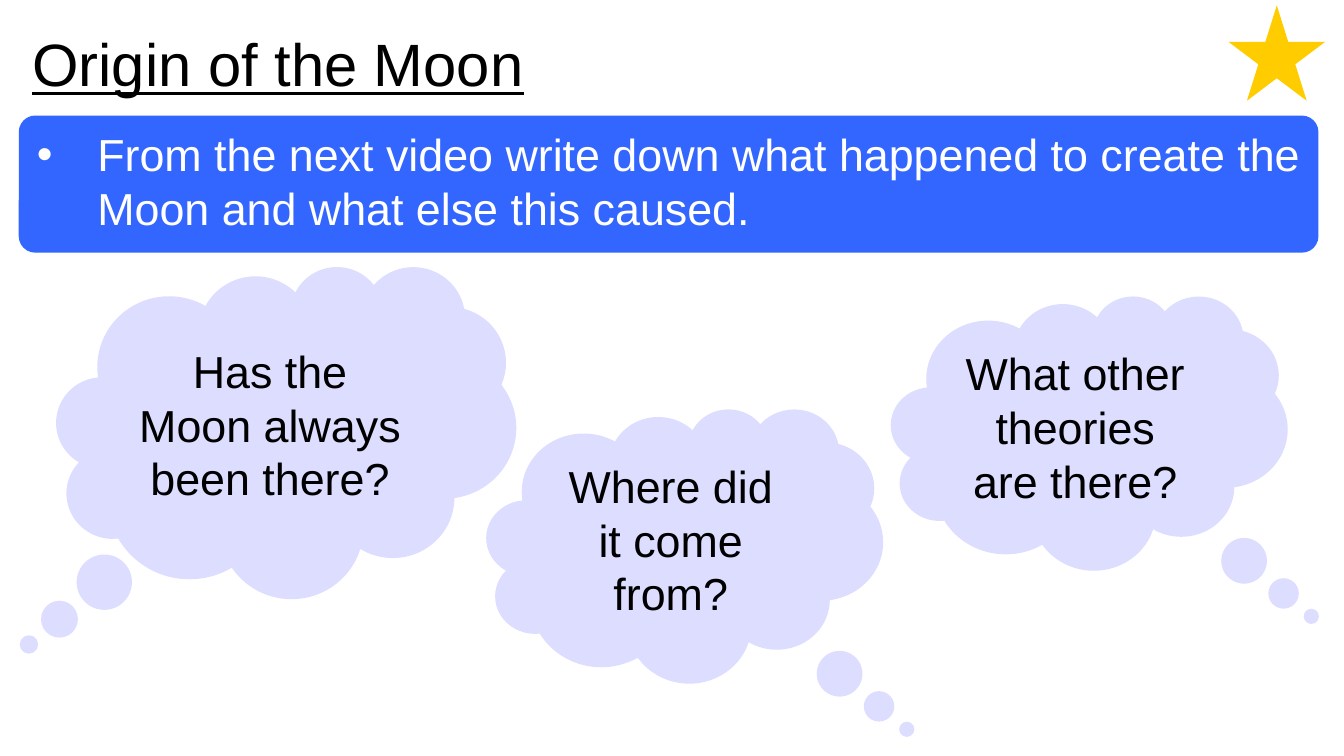
from dataclasses import dataclass

from lxml import etree
from pptx import Presentation
from pptx.dml.color import RGBColor
from pptx.enum.shapes import MSO_SHAPE
from pptx.enum.text import MSO_ANCHOR, MSO_AUTO_SIZE, PP_ALIGN
from pptx.oxml.ns import qn
from pptx.shapes.autoshape import Shape
from pptx.slide import Slide
from pptx.util import Inches, Pt

CLOUD = MSO_SHAPE.CLOUD_CALLOUT
BANNER = MSO_SHAPE.ROUNDED_RECTANGLE
STAR = MSO_SHAPE.STAR_5_POINT
TOP, MIDDLE = MSO_ANCHOR.TOP, MSO_ANCHOR.MIDDLE
LEFT, CENTER = PP_ALIGN.LEFT, PP_ALIGN.CENTER
NO_AUTOFIT = MSO_AUTO_SIZE.NONE

SLIDE_WIDTH = 10
SLIDE_HEIGHT = SLIDE_WIDTH * 9 / 16
FONT = "Arial"
BLACK, WHITE = "000000", "FFFFFF"
BLUE, LAVENDER, GOLD = "3366FF", "DDDDFF", "FFCC00"
BULLET_INDENT = 0.45


@dataclass(frozen=True)
class Box:
    left: float
    top: float
    width: float
    height: float


@dataclass(frozen=True)
class Thought:
    question: str
    box: Box
    tail: tuple[float, float]


MOON_AGE = Thought("Has the Moon always been there?",
                   Box(0.42, 1.98, 3.42, 2.47), (-0.56, 0.64))
MOON_SOURCE = Thought("Where did it come from?",
                      Box(3.62, 3.04, 2.95, 2.04), (0.56, 0.67))
OTHER_THEORIES = Thought("What other theories are there?",
                         Box(6.63, 2.2, 2.95, 2.04), (0.56, 0.67))


def color(value: str) -> RGBColor:
    return RGBColor.from_string(value)


def add_filled(slide: Slide, kind: MSO_SHAPE, box: Box, fill: str,
               adjustments: tuple[float, ...] = ()) -> Shape:
    shape = slide.shapes.add_shape(kind, Inches(box.left), Inches(box.top),
                                   Inches(box.width), Inches(box.height))
    for index, value in enumerate(adjustments):
        shape.adjustments[index] = value
    shape.fill.solid()
    shape.fill.fore_color.rgb = color(fill)
    shape.line.fill.background()
    shape.shadow.inherit = False
    return shape


def write(shape: Shape, text: str, *, size: int = 24, ink: str = BLACK,
          align: PP_ALIGN = LEFT, anchor: MSO_ANCHOR = TOP,
          underline: bool = False, bullet: bool = False) -> None:
    frame = shape.text_frame
    frame.word_wrap = True
    frame.auto_size = NO_AUTOFIT
    frame.vertical_anchor = anchor
    paragraph = frame.paragraphs[0]
    paragraph.alignment = align
    if bullet:
        indent = Inches(BULLET_INDENT)
        properties = paragraph._p.get_or_add_pPr()
        properties.set("marL", str(indent))
        properties.set("indent", str(-indent))
        etree.SubElement(properties, qn("a:buFont"), typeface=FONT)
        etree.SubElement(properties, qn("a:buChar"), char="•")
    run = paragraph.add_run()
    run.text = text
    run.font.name = FONT
    run.font.size = Pt(size)
    run.font.color.rgb = color(ink)
    run.font.underline = underline


def add_thought(slide: Slide, thought: Thought) -> None:
    cloud = add_filled(slide, CLOUD, thought.box, LAVENDER, thought.tail)
    write(cloud, thought.question, align=CENTER, anchor=MIDDLE)


def main() -> None:
    presentation = Presentation()
    presentation.slide_width = Inches(SLIDE_WIDTH)
    presentation.slide_height = Inches(SLIDE_HEIGHT)
    slide = presentation.slides.add_slide(presentation.slide_layouts[5])

    title = slide.shapes.title
    title.left, title.top = Inches(0.14), Inches(0.15)
    title.width, title.height = Inches(4.76), Inches(0.64)
    write(title, "Origin of the Moon", size=32, underline=True)

    task = add_filled(slide, BANNER, Box(0.14, 0.86, 9.67, 1.02), BLUE, (0.12,))
    write(task, "From the next video write down what happened to create the "
                "Moon and what else this caused.", ink=WHITE, bullet=True)

    add_thought(slide, MOON_AGE)
    add_thought(slide, MOON_SOURCE)
    add_filled(slide, STAR, Box(9.14, 0.04, 0.72, 0.71), GOLD)
    add_thought(slide, OTHER_THEORIES)

    presentation.save("out.pptx")


if __name__ == "__main__":
    main()
